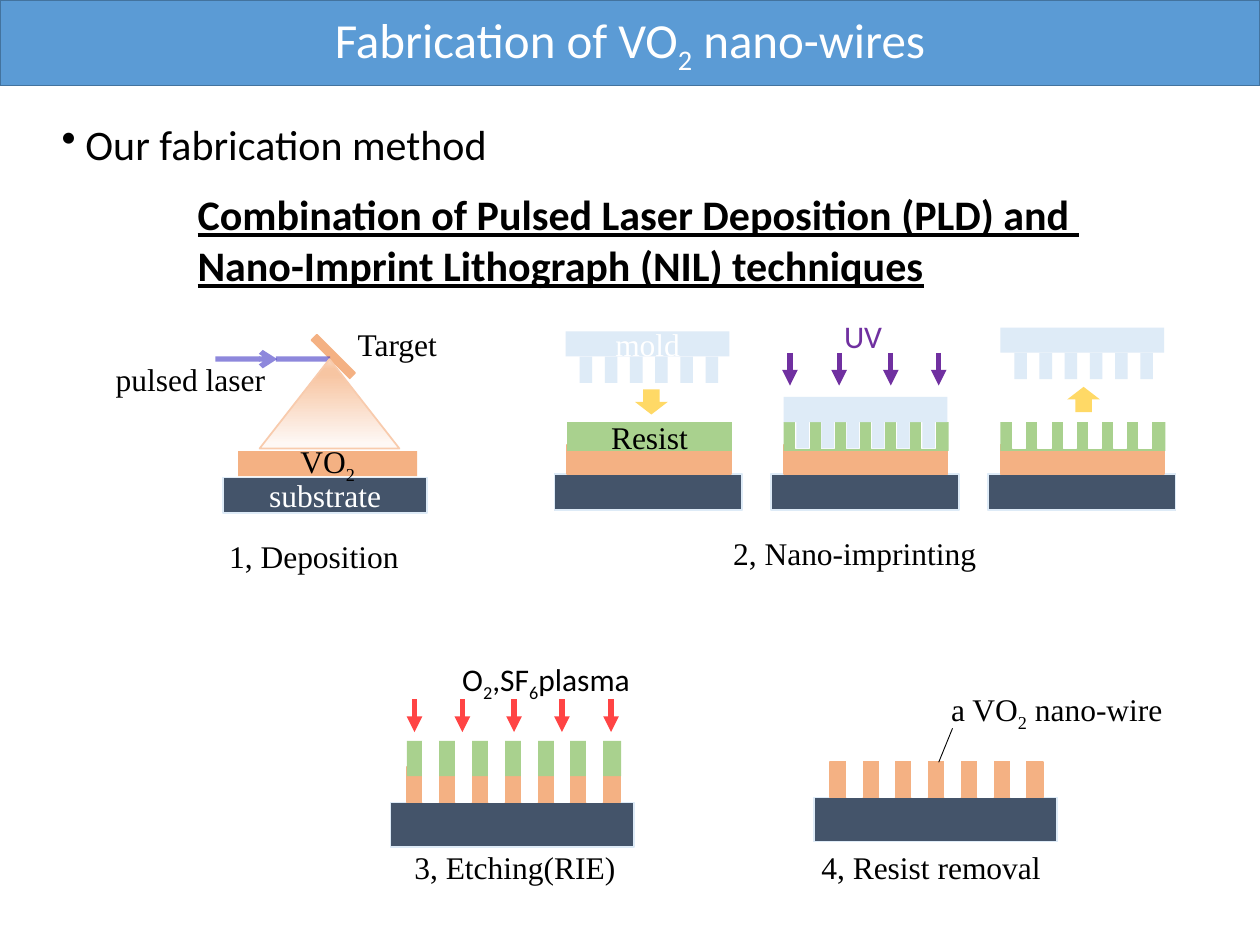
from lxml import etree
from pptx import Presentation
from pptx.dml.color import RGBColor
from pptx.enum.shapes import MSO_CONNECTOR, MSO_SHAPE as SHAPE
from pptx.enum.text import MSO_ANCHOR, MSO_AUTO_SIZE, PP_ALIGN
from pptx.oxml.ns import qn
from pptx.util import Inches, Pt

rgb = RGBColor.from_string
NAVY, ORANGE, GREEN, PALE, WHITE = "44546A", "F4B183", "A9D18E", "DEEBF7", "FFFFFF"
YELLOW, PURPLE, RED, VIOLET = "FFD966", "7030A0", "FF4444", "3F35C5"
SERIF, SANS = "Times New Roman", "Calibri"

prs = Presentation()
prs.slide_width, prs.slide_height = Inches(10), Inches(7.5)
shapes = prs.slides.add_slide(prs.slide_layouts[6]).shapes


def box(x, y, w, h, fill, line=None, kind=SHAPE.RECTANGLE, weight=1):
    sp = shapes.add_shape(kind, Inches(x), Inches(y), Inches(w), Inches(h))
    sp.shadow.inherit = False
    sp.fill.solid()
    sp.fill.fore_color.rgb = rgb(fill)
    if line:
        sp.line.color.rgb = rgb(line)
        sp.line.width = Pt(weight)
    else:
        sp.line.fill.background()
    return sp


def line(x1, y1, x2, y2, color, weight=3, head=None, opacity=None):
    cn = shapes.add_connector(MSO_CONNECTOR.STRAIGHT,
                              Inches(x1), Inches(y1), Inches(x2), Inches(y2))
    cn.line.color.rgb = rgb(color)
    cn.line.width = Pt(weight)
    ln = cn.line._ln
    if opacity:
        clr = ln.find(".//" + qn("a:srgbClr"))
        etree.SubElement(clr, qn("a:alpha")).set("val", str(opacity * 1000))
    if head:
        etree.SubElement(ln, qn("a:tailEnd")).set("type", head)
    etree.SubElement(cn._element.spPr, qn("a:effectLst"))


# Title bar
title = box(0, 0, 10, 0.68, "5B9BD5", "43739E")

# 2: three nano-imprinting stages
resists = []
for i in range(3):
    x = 4.4 + 1.72 * i
    box(x, 3.76, 1.49, 0.29, NAVY, PALE)
    box(x + 0.1, 3.53, 1.3, 0.23, ORANGE, ORANGE)
    resists.append(box(x + 0.1, 3.35, 1.31, 0.23, GREEN))
    if i > 0:
        for j in range(6):
            top = 3.35 if j == 0 else 3.3
            box(x + 0.2 + 0.2 * j, top, 0.1, 3.56 - top, WHITE, WHITE)

# Molds: above, pressed in, lifted off
molds = []
for x, y, inset in [(4.49, 2.63, 0.11), (6.22, 3.15, 0.1), (7.94, 2.6, 0.11)]:
    molds.append(box(x, y, 1.3, 0.2, PALE))
    for j in range(6):
        box(x + inset + 0.2 * j, y + 0.2, 0.1, 0.21, PALE)
box(5.04, 3.09, 0.26, 0.2, YELLOW, kind=SHAPE.DOWN_ARROW)
box(8.47, 3.07, 0.26, 0.2, YELLOW, kind=SHAPE.DOWN_ARROW).rotation = 180

# 1: deposition with laser, target and plume
line(1.71, 2.85, 2.2, 2.85, VIOLET, head="arrow", opacity=58)
box(2.43, 2.8, 0.43, 0.06, ORANGE, ORANGE).rotation = 45
line(2.19, 2.85, 2.62, 2.85, VIOLET, opacity=58)
plume = box(2.06, 2.85, 1.11, 0.71, WHITE, "F8CBAD", SHAPE.ISOSCELES_TRIANGLE)
plume.fill.gradient()
plume.fill.gradient_angle = 90
stops = plume._element.spPr.find(".//" + qn("a:gsLst"))
for old in list(stops):
    stops.remove(old)
for pos, color in [(5, "FEF8F5"), (83, "F7C5A2"), (89, "F7C5A2"), (100, "FAD8C1")]:
    gs = etree.SubElement(stops, qn("a:gs"))
    gs.set("pos", str(pos * 1000))
    etree.SubElement(gs, qn("a:srgbClr")).set("val", color)
substrate = box(1.77, 3.79, 1.62, 0.28, NAVY, PALE)
film = box(1.89, 3.58, 1.42, 0.2, ORANGE)

# 3 and 4: etched wires with and without resist
for x, y, resist in [(6.46, 6.33, False), (3.1, 6.37, True)]:
    box(x, y, 1.93, 0.35, NAVY, PALE)
    box(x + 0.13, y - 0.28, 1.69, 0.28, ORANGE, ORANGE)
    if resist:
        box(x + 0.13, y - 0.49, 1.7, 0.28, GREEN)
    for j in range(6):
        h = 0.49 if j == 0 else 0.56
        box(x + 0.26 + 0.26 * j, y - h, 0.12, h, WHITE, WHITE)
line(7.56, 5.78, 7.45, 6.05, "000000", 0.5)

# Plasma and UV arrows
for xs, y, color in [((3.29, 3.67, 4.08, 4.46, 4.85), 5.55, RED),
                     ((6.27, 6.66, 7.07, 7.45), 2.8, PURPLE)]:
    for x in xs:
        line(x, y, x, y + 0.26, color, head="triangle")

# Text: every second run of a paragraph is a subscript
method = box(0.39, 0.89, 3.66, 0.5, WHITE, WHITE, weight=2.25)
texts = [
    (title, [["Fabrication of VO", "2", " nano-wires"]], 28, SANS, WHITE),
    (molds[0], [["mold"]], 18, SERIF, WHITE),
    (resists[0], [["Resist"]], 18, SERIF, "000000"),
    (substrate, [["substrate"]], 18, SERIF, WHITE),
    (film, [["VO", "2"]], 18, SERIF, "000000"),
    (method, [["Our fabrication method"]], 24, SANS, "000000"),
    ((1.47, 1.45, 7.27, 0.91),
     [["Combination of Pulsed Laser Deposition (PLD) and "],
      ["Nano-Imprint Lithograph (NIL) techniques"]], 24, SANS, "000000"),
    ((2.74, 2.53, 0.87, 0.49), [["Target"]], 18, SERIF, "000000"),
    ((0.82, 2.81, 1.4, 0.4), [["pulsed laser"]], 18, SERIF, "000000"),
    ((1.72, 4.21, 1.61, 0.49), [["1, Deposition"]], 18, SERIF, "000000"),
    ((5.72, 4.19, 2.22, 0.49), [["2, Nano-imprinting"]], 18, SERIF, "000000"),
    ((3.19, 6.68, 1.87, 0.49), [["3, Etching(RIE)"]], 18, SERIF, "000000"),
    ((6.42, 6.68, 2.02, 0.49), [["4, Resist removal"]], 18, SERIF, "000000"),
    ((7.45, 5.43, 1.91, 0.4), [["a VO", "2", " nano-wire"]], 18, SERIF, "000000"),
    ((3.57, 5.19, 1.62, 0.49), [["O", "2", ",SF", "6", "plasma"]], 18, SANS, "000000"),
    ((6.6, 2.47, 0.51, 0.4), [["UV"]], 18, SANS, PURPLE),
]
for place, paragraphs, size, font, color in texts:
    is_label = isinstance(place, tuple)
    sp = shapes.add_textbox(*map(Inches, place)) if is_label else place
    tf = sp.text_frame
    left = is_label or sp is method
    if is_label:
        tf.word_wrap = False
        tf.auto_size = MSO_AUTO_SIZE.SHAPE_TO_FIT_TEXT
    tf.vertical_anchor = MSO_ANCHOR.TOP if left else MSO_ANCHOR.MIDDLE
    for i, runs in enumerate(paragraphs):
        p = tf.add_paragraph() if i else tf.paragraphs[0]
        p.alignment = PP_ALIGN.LEFT if left else PP_ALIGN.CENTER
        p.font.size, p.font.name = Pt(size), font
        p.font.color.rgb = rgb(color)
        if len(paragraphs) > 1:
            p.font.bold = p.font.underline = True
        for j, text in enumerate(runs):
            r = p.add_run()
            r.text = text
            if j % 2:
                r.font._element.set("baseline", "-25000")

# Bullet with a hanging indent
pPr = method.text_frame.paragraphs[0]._p.get_or_add_pPr()
pPr.set("marL", str(Inches(0.19)))
pPr.set("indent", str(Inches(-0.19)))
bullet = etree.Element(qn("a:buChar"))
bullet.set("char", "•")
pPr.insert(0, bullet)

prs.save("out.pptx")
